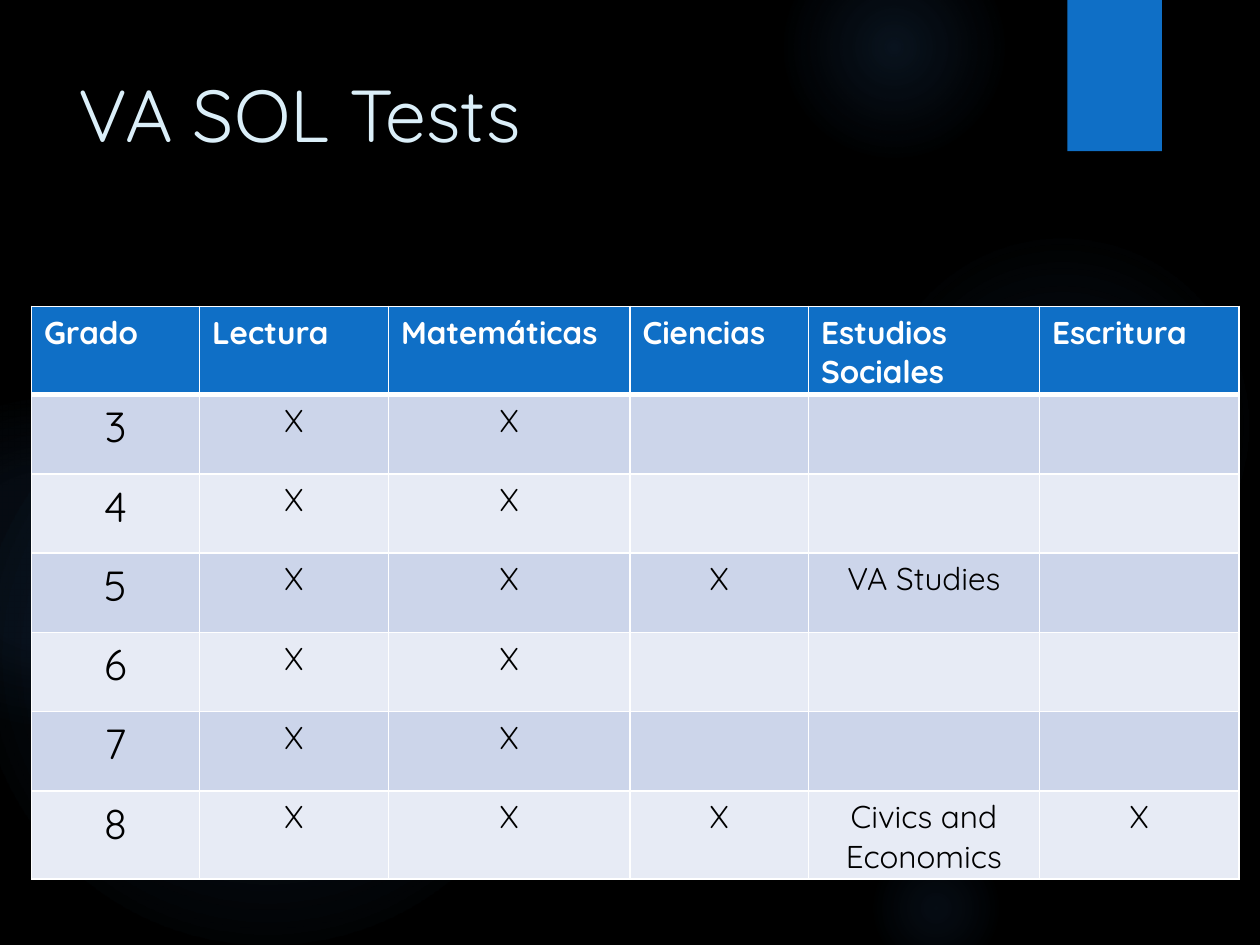
from lxml import etree
from pptx import Presentation, util as u
from pptx.dml.color import RGBColor
from pptx.enum import shapes, text
from pptx.oxml import parse_xml
from pptx.oxml.ns import nsdecls, qn

UNIT = 1 / 36  # the slide is a grid of 360 columns by 270 rows
COLUMNS, ROWS = 360, 270


def colour(hex_string):
    return RGBColor.from_string(hex_string)


def grid(*steps):
    return [u.Inches(step * UNIT) for step in steps]


class Deck:
    font = "Quicksand"
    accent, glow_blue, title_blue = "0F6FC6", "448AD7", "DBEFF9"
    white, black = "FFFFFF", "000000"
    bands = ("CCD5EA", "E7EBF5")

    def __init__(self):
        self.file = Presentation()
        self.file.slide_width, self.file.slide_height = grid(COLUMNS, ROWS)
        self.slide = self.file.slides.add_slide(self.file.slide_layouts[6])
        background = self.slide.background.fill
        background.solid()
        background.fore_color.rgb = colour(self.black)

    def plain_shape(self, kind, place):
        shape = self.slide.shapes.add_shape(kind, *grid(*place))
        shape.shadow.inherit = False
        shape.line.fill.background()
        return shape

    def glow(self, left, top, size, stops):
        """A circle that fades out from its centre; stops are (position, opacity)."""
        circle = self.plain_shape(shapes.MSO_SHAPE.OVAL, (left, top, size, size))
        circle.fill.background()
        steps = "".join(
            f'<a:gs pos="{position * 1000}"><a:srgbClr val="{self.glow_blue}">'
            f'<a:alpha val="{opacity * 1000}"/></a:srgbClr></a:gs>'
            for position, opacity in stops)
        gradient = parse_xml(
            f'<a:gradFill {nsdecls("a")} rotWithShape="1"><a:gsLst>{steps}</a:gsLst>'
            '<a:path path="circle"><a:fillToRect l="50000" t="50000" r="50000" b="50000"/>'
            '</a:path></a:gradFill>')
        properties = circle._element.spPr
        properties.replace(properties.find(qn("a:noFill")), gradient)

    def tab(self, *place):
        tab = self.plain_shape(shapes.MSO_SHAPE.RECTANGLE, place)
        tab.fill.solid()
        tab.fill.fore_color.rgb = colour(self.accent)
        tab._element.spPr.find(qn("a:effectLst")).append(parse_xml(
            f'<a:outerShdw {nsdecls("a")} blurRad="{u.Pt(3)}" dist="{u.Pt(2)}" dir="5400000">'
            f'<a:srgbClr val="{self.black}"><a:alpha val="45000"/></a:srgbClr></a:outerShdw>'))

    def add_words(self, frame, words, size, ink, bold=False, align=text.PP_ALIGN.LEFT):
        paragraph = frame.paragraphs[0]
        paragraph.alignment = align
        run = paragraph.add_run()
        run.text = words
        run.font.name, run.font.size, run.font.bold = self.font, u.Pt(size), bold
        run.font.color.rgb = colour(ink)

    def title(self, words, *place):
        frame = self.slide.shapes.add_textbox(*grid(*place)).text_frame
        frame.word_wrap = True
        self.add_words(frame, words, 42, self.title_blue)

    def borders(self, cell, top=1, bottom=1):
        properties = cell._tc.get_or_add_tcPr()
        for side, points in zip("LRTB", (1, 1, top, bottom)):
            line = etree.SubElement(properties, qn(f"a:ln{side}"), w=str(u.Pt(points)))
            fill = etree.SubElement(line, qn("a:solidFill"))
            etree.SubElement(fill, qn("a:srgbClr"), val=self.white)

    def table(self, left, top, widths, row_height, records):
        table = self.slide.shapes.add_table(
            len(records), len(widths),
            *grid(left, top, sum(widths), row_height * len(records))).table
        for column, width in zip(table.columns, grid(*widths)):
            column.width = width
        for r, record in enumerate(records):
            for c, words in enumerate(record):
                cell = table.cell(r, c)
                # A thick rule parts the header from the body
                self.borders(cell, top=3 if r == 1 else 1, bottom=3 if r == 0 else 1)
                cell.fill.solid()
                cell.fill.fore_color.rgb = colour(self.bands[(r - 1) % 2] if r else self.accent)
                if r == 0:
                    self.add_words(cell.text_frame, words, 18, self.white, bold=True)
                elif words:
                    self.add_words(cell.text_frame, words, 18 if c else 24, self.black,
                                   align=text.PP_ALIGN.CENTER)


def main():
    deck = Deck()

    # Background glows and corner tab
    deck.glow(248, 66, 111, [(0, 7), (36, 6), (69, 0)])
    deck.glow(224, -18, 63, [(0, 14), (36, 7), (73, 0)])
    deck.glow(248, 240, 39, [(0, 9), (36, 5), (66, 0)])
    deck.glow(-6, 105, 165, [(0, 11), (36, 10), (75, 0)])
    deck.glow(-33, 114, 93, [(0, 8), (36, 8), (72, 0)])
    deck.tab(305, 0, 27, 43.2)

    deck.title("VA SOL Tests", 19, 18, 278, 55)

    # Tests by grade: reading and mathematics are taken in every grade
    header = ["Grado", "Lectura", "Matemáticas", "Ciencias", "Estudios Sociales", "Escritura"]
    other_tests = {
        5: ["X", "VA Studies", ""],
        8: ["X", "Civics and Economics", "X"],
    }
    grades = [[str(grade), "X", "X", *other_tests.get(grade, [""] * 3)]
              for grade in range(3, 9)]
    deck.table(9, 87.5, [48, 54, 69, 51, 66, 57], 22.65, [header, *grades])

    deck.file.save("out.pptx")


if __name__ == "__main__":
    main()
